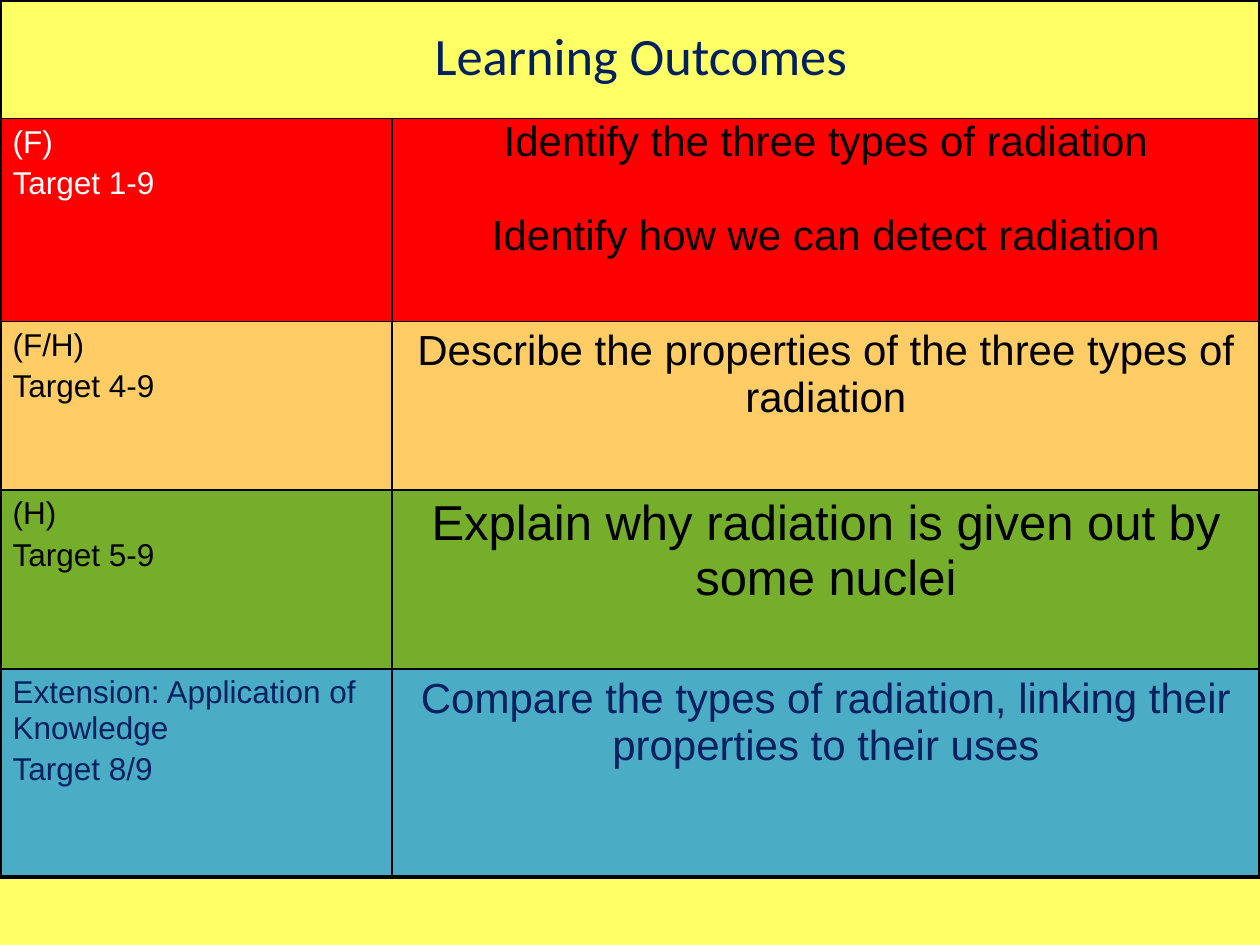
from lxml import etree
from pptx import Presentation
from pptx.dml.color import RGBColor
from pptx.enum import text
from pptx.oxml import ns
from pptx.util import Pt

YELLOW = RGBColor(0xFF, 0xFF, 0x66)
RED = RGBColor(0xFF, 0x00, 0x00)
ORANGE = RGBColor(0xFF, 0xCC, 0x66)
GREEN = RGBColor(0x75, 0xAE, 0x2B)
BLUE = RGBColor(0x4B, 0xAC, 0xC6)
NAVY = RGBColor(0x00, 0x20, 0x60)
BLACK = RGBColor(0x00, 0x00, 0x00)
WHITE = RGBColor(0xFF, 0xFF, 0xFF)

LEVELS = [
    (RED, WHITE, BLACK, 24, ["(F)", "Target 1-9"],
     ["Identify the three types of radiation",
      "Identify how we can detect radiation"]),
    (ORANGE, BLACK, BLACK, 24, ["(F/H)", "Target 4-9"],
     ["Describe the properties of the three types of radiation"]),
    (GREEN, BLACK, BLACK, 28, ["(H)", "Target 5-9"],
     ["Explain why radiation is given out by some nuclei"]),
    (BLUE, NAVY, NAVY, 24,
     ["Extension: Application of Knowledge", "Target 8/9"],
     ["Compare the types of radiation, linking their properties to their uses"]),
]
WIDTHS = [223.9, 496.1]
HEIGHTS = [67.7, 115.9, 96.5, 102.2, 118.8]


def border(cell, side, width):
    props = cell._tc.get_or_add_tcPr()
    line = etree.SubElement(props, ns.qn("a:ln" + side), w=str(Pt(width)))
    fill = etree.SubElement(line, ns.qn("a:solidFill"))
    etree.SubElement(fill, ns.qn("a:srgbClr"), val=str(BLACK))


def write(cell, lines, size, color, align, gap):
    frame = cell.text_frame
    frame.text = "\n".join(lines)
    for i, para in enumerate(frame.paragraphs):
        para.alignment = align
        para.space_before = Pt(gap if i else 0)
        para.font.name = "Arial"
        para.font.size = Pt(size)
        para.font.color.rgb = color


deck = Presentation()
deck.slide_width, deck.slide_height = Pt(720), Pt(540)
slide = deck.slides.add_slide(deck.slide_layouts[6])
slide.background.fill.solid()
slide.background.fill.fore_color.rgb = YELLOW

table = slide.shapes.add_table(5, 2, 0, 0, Pt(720), Pt(sum(HEIGHTS))).table
table.first_row = False
table.horz_banding = False
for col, width in zip(table.columns, WIDTHS):
    col.width = Pt(width)
for row, height in zip(table.rows, HEIGHTS):
    row.height = Pt(height)
table.cell(0, 0).merge(table.cell(0, 1))

fills = [YELLOW] + [level[0] for level in LEVELS]
for r, fill in enumerate(fills):
    for c in range(2):
        cell = table.cell(r, c)
        edges = {"L": c == 0, "R": c == 1 or r == 0, "T": r == 0, "B": r == 4}
        for side, outer in edges.items():
            border(cell, side, 2.25 if outer else 1)
        cell.fill.solid()
        cell.fill.fore_color.rgb = fill

for r, (_, ink, tint, size, target, goal) in enumerate(LEVELS, 1):
    write(table.cell(r, 0), target, 18, ink, text.PP_ALIGN.LEFT, 3.6)
    write(table.cell(r, 1), goal, size, tint, text.PP_ALIGN.CENTER, 27)

first = table.cell(1, 1)
first.margin_left = first.margin_right = Pt(8.64)
first.margin_top = first.margin_bottom = 0

title = slide.shapes.add_textbox(Pt(241.2), Pt(9.4), Pt(260.6), Pt(43.9))
frame = title.text_frame
frame.word_wrap = True
frame.auto_size = text.MSO_AUTO_SIZE.SHAPE_TO_FIT_TEXT
para = frame.paragraphs[0]
para.text = "Learning Outcomes"
para.font.name = "Calibri"
para.font.size = Pt(30)
para.font.color.rgb = NAVY

deck.save("out.pptx")
